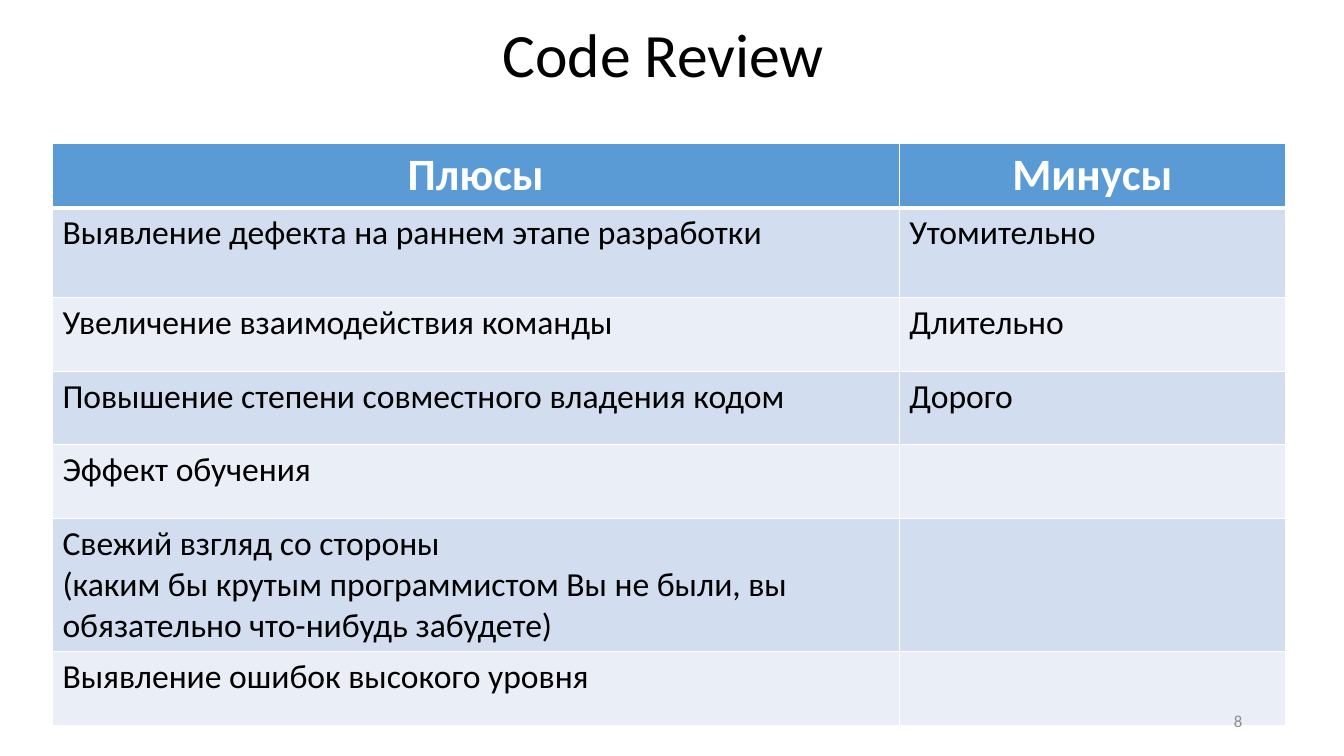
from lxml import etree
from pptx import Presentation
from pptx.dml.color import RGBColor
from pptx.enum.text import MSO_ANCHOR as Anchor, PP_ALIGN as Align
from pptx.oxml.ns import qn
from pptx.util import Inches, Pt

FONT = "Calibri"
WHITE, BLACK, GREY = "FFFFFF", "000000", "8C8C8C"
HEADER_FILL = "5B9BD5"
BAND_FILLS = ("D2DEEF", "EAEFF7")

COLUMN_WIDTHS = (8.4, 3.83)
ROW_HEIGHTS = (0.62, 0.89, 0.73, 0.73, 0.73, 1.28, 0.73)
HEADERS = ("Плюсы", "Минусы")
PROS = (
    ("Выявление дефекта на раннем этапе разработки",),
    ("Увеличение взаимодействия команды",),
    ("Повышение степени совместного владения кодом",),
    ("Эффект обучения",),
    ("Свежий взгляд со стороны",
     "(каким бы крутым программистом Вы не были, вы обязательно что-нибудь забудете)"),
    ("Выявление ошибок высокого уровня",),
)
CONS = (("Утомительно",), ("Длительно",), ("Дорого",), (), (), ())


def color(value):
    return RGBColor.from_string(value)


def write_lines(frame, lines, size, text_color, bold=False, align=Align.LEFT):
    """Put each line in its own paragraph of the text frame."""
    for index, line in enumerate(lines):
        paragraph = frame.paragraphs[0] if index == 0 else frame.add_paragraph()
        paragraph.alignment = align
        run = paragraph.add_run()
        run.text = line
        run.font.name = FONT
        run.font.size = Pt(size)
        run.font.bold = bold
        run.font.color.rgb = color(text_color)


def set_borders(cell, bottom_width=1):
    """Draw white borders, one point wide except perhaps at the bottom."""
    properties = cell._tc.get_or_add_tcPr()
    widths = {"a:lnL": 1, "a:lnR": 1, "a:lnT": 1, "a:lnB": bottom_width}
    for index, (tag, width) in enumerate(widths.items()):
        line = etree.Element(qn(tag), w=str(Pt(width)))
        fill = etree.SubElement(line, qn("a:solidFill"))
        etree.SubElement(fill, qn("a:srgbClr"), val=WHITE)
        properties.insert(index, line)


def fill_cell(cell, fill):
    cell.fill.solid()
    cell.fill.fore_color.rgb = color(fill)


def add_comparison_table(slide, left, top):
    table = slide.shapes.add_table(
        len(ROW_HEIGHTS), len(COLUMN_WIDTHS), Inches(left), Inches(top),
        Inches(sum(COLUMN_WIDTHS)), Inches(sum(ROW_HEIGHTS))).table
    table.first_row = table.horz_banding = False
    for column, width in zip(table.columns, COLUMN_WIDTHS):
        column.width = Inches(width)
    for row, height in zip(table.rows, ROW_HEIGHTS):
        row.height = Inches(height)

    for cell, header in zip(table.rows[0].cells, HEADERS):
        fill_cell(cell, HEADER_FILL)
        set_borders(cell, bottom_width=3)
        write_lines(cell.text_frame, (header,), 32, WHITE, True, Align.CENTER)

    for row_index, texts in enumerate(zip(PROS, CONS), start=1):
        for cell, lines in zip(table.rows[row_index].cells, texts):
            fill_cell(cell, BAND_FILLS[(row_index - 1) % 2])
            if row_index > 1:
                set_borders(cell)
            else:
                set_borders(cell)
                cell._tc.tcPr.find(qn("a:lnT")).set("w", str(Pt(3)))
            write_lines(cell.text_frame, lines, 24, BLACK)


def add_text(slide, box, text, size, text_color, align):
    frame = slide.shapes.add_textbox(*map(Inches, box)).text_frame
    frame.word_wrap = True
    frame.vertical_anchor = Anchor.MIDDLE
    write_lines(frame, (text,), size, text_color, align=align)
    return frame


def add_title(slide, box, text):
    frame = add_text(slide, box, text, 44, BLACK, Align.CENTER)
    frame.paragraphs[0].line_spacing = 0.9


def add_page_number(slide, box, number):
    add_text(slide, box, number, 12, GREY, Align.RIGHT)


def main():
    presentation = Presentation()
    presentation.slide_width = Inches(13.33)
    presentation.slide_height = Inches(7.5)
    slide = presentation.slides.add_slide(presentation.slide_layouts[6])
    add_comparison_table(slide, 0.52, 1.42)
    add_page_number(slide, (9.42, 6.95, 3, 0.4), "8")
    add_title(slide, (0.83, -0.15, 11.5, 1.45), "Code Review")
    presentation.save("out.pptx")


if __name__ == "__main__":
    main()
